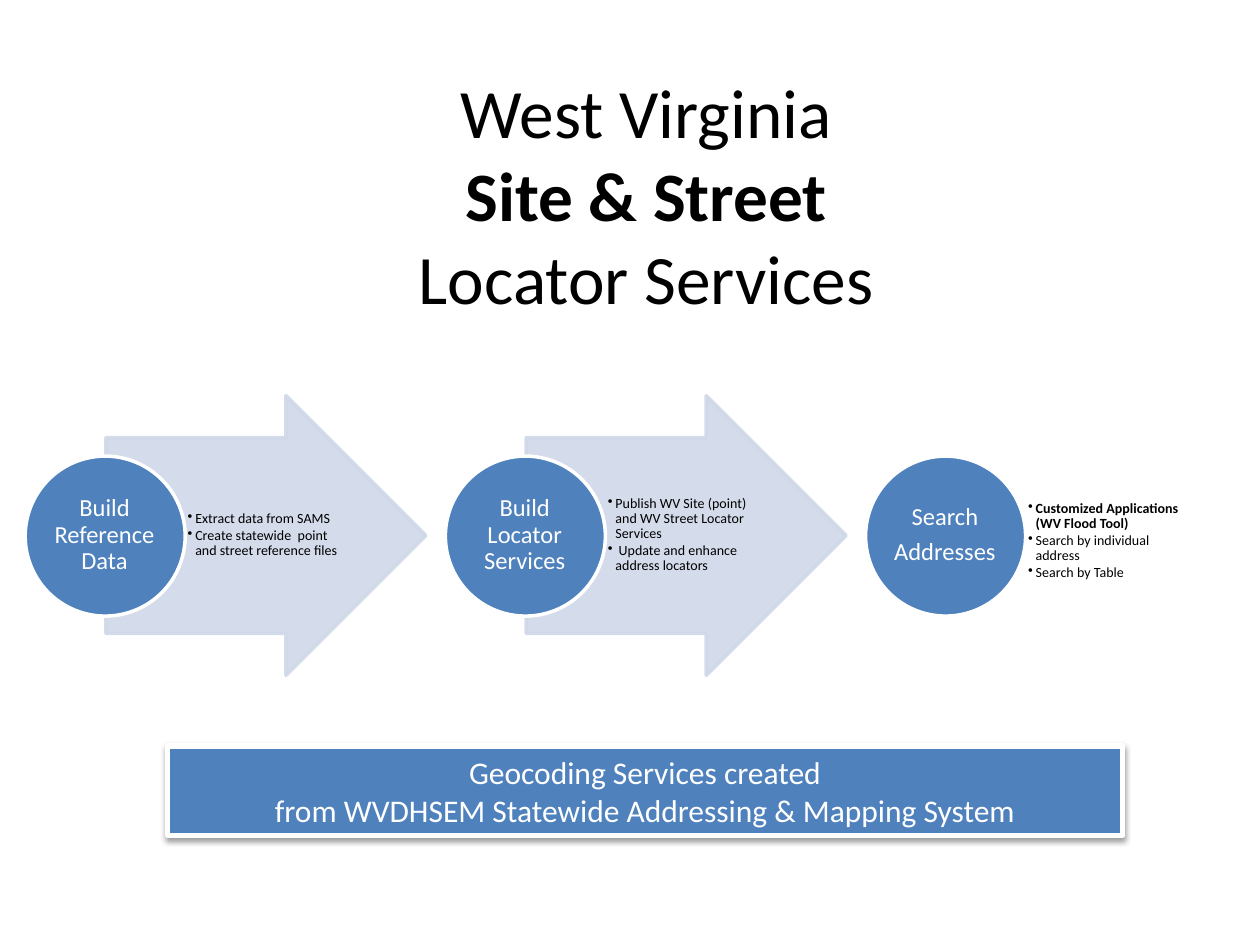
from lxml import etree
from pptx import Presentation
from pptx.dml.color import RGBColor
from pptx.enum.shapes import MSO_SHAPE
from pptx.enum.text import MSO_ANCHOR, PP_ALIGN
from pptx.oxml import parse_xml
from pptx.oxml.ns import nsdecls, qn
from pptx.util import Inches, Pt

ARROW, OVAL, RECT = MSO_SHAPE.RIGHT_ARROW, MSO_SHAPE.OVAL, MSO_SHAPE.RECTANGLE
LEFT, CENTER = PP_ALIGN.LEFT, PP_ALIGN.CENTER
MIDDLE = MSO_ANCHOR.MIDDLE
BLUE, PALE, WHITE, BLACK = "4F81BD", "D0D8E8", "FFFFFF", "000000"

TITLE = ["West Virginia", "Site & Street", "Locator Services"]
BOLD = {"Site & Street", "Customized Applications", "(WV Flood Tool)"}
BANNER = "Geocoding Services created\nfrom WVDHSEM Statewide Addressing & Mapping System"
STEPS = [
    {"label": ["Build Reference Data"],
     "notes": ["Extract data from SAMS",
               "Create statewide  point and street reference files"]},
    {"label": ["Build Locator\nServices"],
     "notes": ["Publish WV Site (point) and WV Street Locator Services",
               " Update and enhance address locators"]},
    {"label": ["Search", "Addresses"],
     "notes": ["Customized Applications\n(WV Flood Tool)",
               "Search by individual address", "Search by Table"]},
]
STEP_LEFT, STEP_PITCH = 0.2, 3.335
LABEL_FORMAT = {"alignment": CENTER, "line_spacing": 0.9, "space_after": Pt(4.9)}
NOTE_FORMAT = {"alignment": LEFT, "line_spacing": 0.9, "space_after": Pt(1.2)}


def rgb(color):
    return RGBColor.from_string(color)


def add_bullet(p):
    pPr = p._p.get_or_add_pPr()
    pPr.set("marL", str(Inches(0.06)))
    pPr.set("indent", str(Inches(-0.06)))
    etree.SubElement(pPr, qn("a:buChar")).set("char", "•")


def write(sp, paragraphs, size, color, p_format, insets=None, bullets=False):
    """Fill a shape with paragraphs; insets are left, top, right, bottom."""
    tf = sp.text_frame
    tf.word_wrap = True
    tf.vertical_anchor = MIDDLE
    for side, inset in zip(("left", "top", "right", "bottom"), insets or ()):
        setattr(tf, f"margin_{side}", Inches(inset))
    for i, text in enumerate(paragraphs):
        p = tf.paragraphs[0] if i == 0 else tf.add_paragraph()
        for name, value in p_format.items():
            setattr(p, name, value)
        if bullets:
            add_bullet(p)
        p.text = text
        for r in p.runs:
            font = {"name": "Calibri", "size": Pt(size), "bold": r.text in BOLD}
            for name, value in font.items():
                setattr(r.font, name, value)
            r.font.color.rgb = rgb(color)


def add_text(s, box, *args, **kwargs):
    write(s.shapes.add_textbox(*map(Inches, box)), *args, **kwargs)


def add_shape(s, kind, box, fill, line, width, opacity=None):
    sp = s.shapes.add_shape(kind, *map(Inches, box))
    sp.shadow.inherit = False
    sp.fill.solid()
    sp.fill.fore_color.rgb = rgb(fill)
    sp.line.color.rgb = rgb(line)
    sp.line.width = Pt(width)
    if opacity:
        for clr in sp._element.spPr.iter(qn("a:srgbClr")):
            etree.SubElement(clr, qn("a:alpha")).set("val", str(opacity * 1000))
    return sp


def add_drop_shadow(sp):
    effects = sp._element.spPr.find(qn("a:effectLst"))
    effects.append(parse_xml(
        f'<a:outerShdw {nsdecls("a")} blurRad="{Pt(3.1)}" dist="{Pt(1.6)}" '
        'dir="5400000" rotWithShape="0"><a:srgbClr val="000000">'
        '<a:alpha val="38000"/></a:srgbClr></a:outerShdw>'))


def add_step(s, index, step):
    x = STEP_LEFT + index * STEP_PITCH
    last = index == len(STEPS) - 1
    if not last:
        arrow = add_shape(s, ARROW, (x + 0.64, 3.14, 2.54, 2.22), PALE, PALE, 2, 90)
        arrow.adjustments[0] = 0.7
        arrow.adjustments[1] = 0.5
    top, bottom_inset = (3.58, 0.13) if last else (3.47, 0.01)
    add_text(s, (x + 1.27, top, 1.24, 1.55), step["notes"], 8, BLACK, NOTE_FORMAT,
             (0.02, 0.01, 0.01, bottom_inset), bullets=True)
    add_shape(s, OVAL, (x, 3.62, 1.27, 1.27), BLUE, WHITE, 2)
    add_text(s, (x + 0.18, 3.8, 0.9, 0.9), step["label"], 14, WHITE, LABEL_FORMAT,
             (0.01,) * 4)


def main():
    prs = Presentation()
    prs.slide_width, prs.slide_height = Inches(10), Inches(7.5)
    s = prs.slides.add_slide(prs.slide_layouts[6])
    add_text(s, (1.17, 0.75, 7.92, 1.58), ["\n".join(TITLE)], 39.6, BLACK,
             {"alignment": CENTER})
    for index, step in enumerate(STEPS):
        add_step(s, index, step)
    banner = add_shape(s, RECT, (1.33, 5.92, 7.58, 0.71), BLUE, WHITE, 3)
    add_drop_shadow(banner)
    write(banner, [BANNER], 18, WHITE, {"alignment": CENTER})
    prs.save("out.pptx")


if __name__ == "__main__":
    main()
